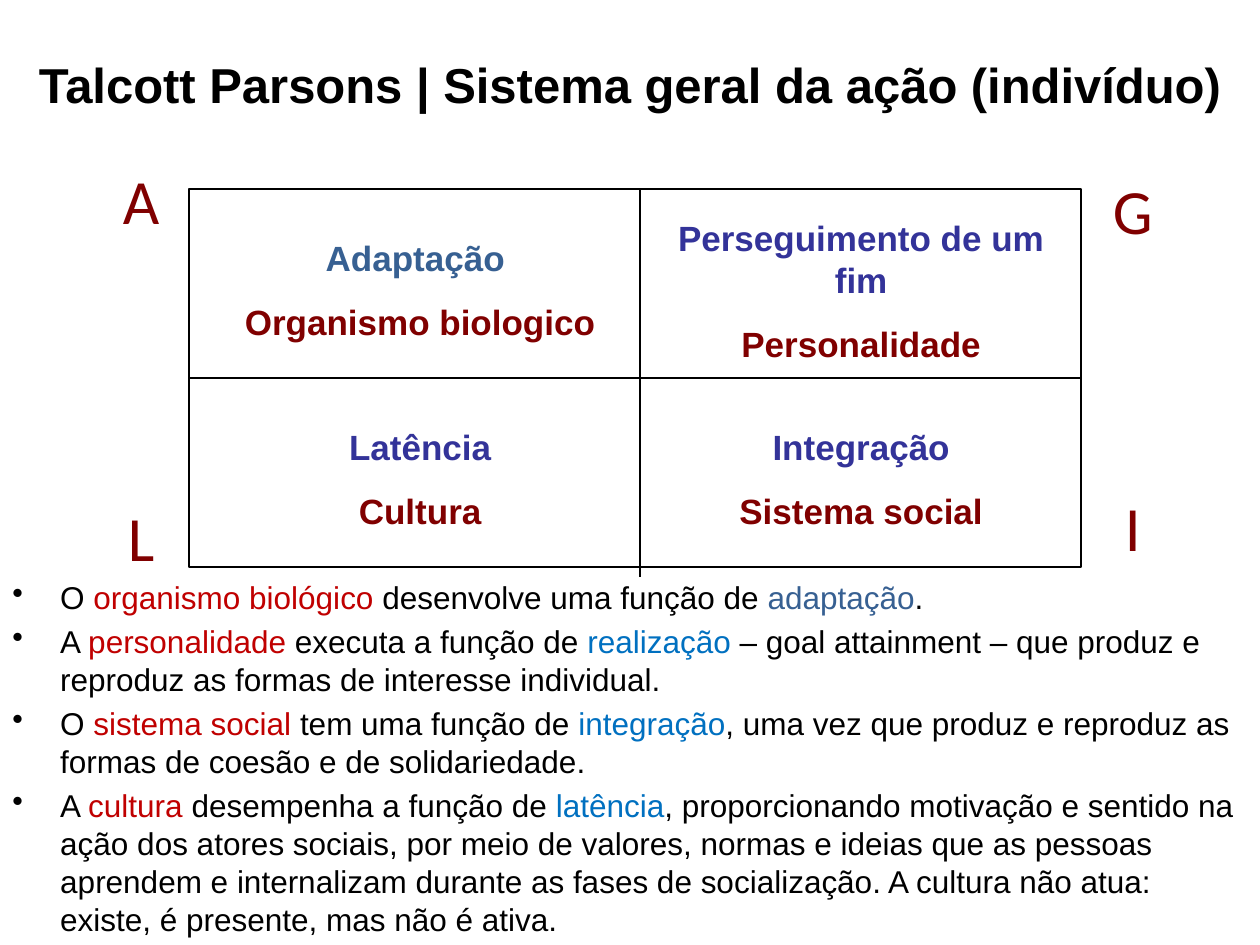
"""Build the slide on Parsons' general system of action."""
import pptx
import pptx.util
import pptx.dml.color
import pptx.enum.shapes
import pptx.enum.text
import lxml.etree

WIDE, HIGH = 10, 7.5
THEME = {
    "ink": "000000", "wine": "800000", "red": "C00000", "steel": "376092",
    "navy": "333399", "blue": "0070C0",
    "sans": "Arial", "serif": "Calibri",
    "title": 28, "body": 18, "cell": 20, "mark": 36, "line": 0.75,
}
TITLE = "Talcott Parsons | Sistema geral da ação (indivíduo)"
CELLS = [
    (0, 0, 1.83, 0.96, "Adaptação ", "steel", "Organismo biologico"),
    (1, 0, 1.67, 1.3, "Perseguimento de um fim", "navy", "Personalidade"),
    (0, 1, 3.33, 0.96, "Latência", "navy", "Cultura"),
    (1, 1, 3.33, 0.96, "Integração", "navy", "Sistema social"),
]
MARKS = [("A", 0.83, 1.23), ("G", 8.7, 1.31), ("I", 8.7, 3.83), ("L", 0.83, 3.91)]
POINTS = [
    [("O ", "ink"), ("organismo biológico ", "red"),
     ("desenvolve uma função de ", "ink"), ("adaptação", "steel"), (".", "ink")],
    [("A ", "ink"), ("personalidade", "red"), (" executa a função de ", "ink"),
     ("realização", "blue"),
     (" – goal attainment – que produz e reproduz as formas de interesse "
      "individual.", "ink")],
    [("O ", "ink"), ("sistema social ", "red"), ("tem uma função de ", "ink"),
     ("integração", "blue"),
     (", uma vez que produz e reproduz as formas de coesão e de "
      "solidariedade.", "ink")],
    [("A ", "ink"), ("cultura", "red"), (" desempenha a função de ", "ink"),
     ("latência", "blue"),
     (", proporcionando motivação e sentido na ação dos atores sociais, por "
      "meio de valores, normas e ideias que as pessoas aprendem e internalizam "
      "durante as fases de socialização. A cultura não atua: existe, é "
      "presente, mas não é ativa.", "ink")],
]
GRID = (1.5, 1.5, 7.08, 3)
SPLIT, FOOT = 5.08, 4.58
CELL_X, CELL_W = (1.67, 5.17), 3.33

inch = pptx.util.Inches
ALIGN = pptx.enum.text.PP_ALIGN
ANCHOR = pptx.enum.text.MSO_ANCHOR


def tint(name):
    return pptx.dml.color.RGBColor.from_string(THEME[name])


def write(slide, area, paras, size="body", font="sans", bold=False,
          align=ALIGN.CENTER, anchor=ANCHOR.TOP, gap=0, bullet=False):
    box = slide.shapes.add_textbox(*map(inch, area))
    frame = box.text_frame
    frame.word_wrap = True
    frame.vertical_anchor = anchor
    for i, runs in enumerate(paras):
        para = frame.add_paragraph() if i else frame.paragraphs[0]
        para.alignment = align
        para.space_before = pptx.util.Pt(gap)
        for text, color in runs:
            run = para.add_run()
            run.text = text
            run.font.size = pptx.util.Pt(THEME[size])
            run.font.name = THEME[font]
            run.font.bold = bold
            run.font.color.rgb = tint(color)
        if bullet:
            props = para._p.get_or_add_pPr()
            props.set("marL", str(inch(0.38)))
            props.set("indent", str(-inch(0.38)))
            mark = lxml.etree.SubElement(props, pptx.oxml.ns.qn("a:buChar"))
            mark.set("char", "•")


def rule(slide, start, end):
    line = slide.shapes.add_connector(
        pptx.enum.shapes.MSO_CONNECTOR.STRAIGHT, *map(inch, start + end))
    line.line.color.rgb = tint("ink")
    line.line.width = pptx.util.Pt(THEME["line"])
    lxml.etree.SubElement(line._element.spPr, pptx.oxml.ns.qn("a:effectLst"))
    return line


def draw(slide):
    left, top, wide, high = GRID
    write(slide, (0, 0.08, WIDE, 1.17), [[(TITLE, "ink")]],
          size="title", bold=True, anchor=ANCHOR.MIDDLE)
    write(slide, (0, 4.54, WIDE, 3.12), POINTS,
          align=ALIGN.LEFT, gap=0.2 * THEME["body"], bullet=True)

    frame = slide.shapes.add_shape(
        pptx.enum.shapes.MSO_SHAPE.RECTANGLE, *map(inch, GRID))
    frame.shadow.inherit = False
    frame.fill.background()
    frame.line.color.rgb = tint("ink")
    frame.line.width = pptx.util.Pt(THEME["line"])
    rule(slide, (SPLIT, top), (SPLIT, FOOT))
    mid = top + high / 2
    cross = rule(slide, (left, mid), (left + wide, mid))
    cross.begin_connect(frame, 1)
    cross.end_connect(frame, 3)

    for col, row, y, tall, head, color, part in CELLS:
        write(slide, (CELL_X[col], y, CELL_W, tall),
              [[(head, color)], [(part, "wine")]],
              size="cell", bold=True, gap=12.5)
    for text, x, y in MARKS:
        write(slide, (x, y, 0.58, 0.71), [[(text, "wine")]],
              size="mark", font="serif", gap=15)


def main():
    deck = pptx.Presentation()
    deck.slide_width, deck.slide_height = inch(WIDE), inch(HIGH)
    draw(deck.slides.add_slide(deck.slide_layouts[6]))
    deck.save("out.pptx")


if __name__ == "__main__":
    main()
